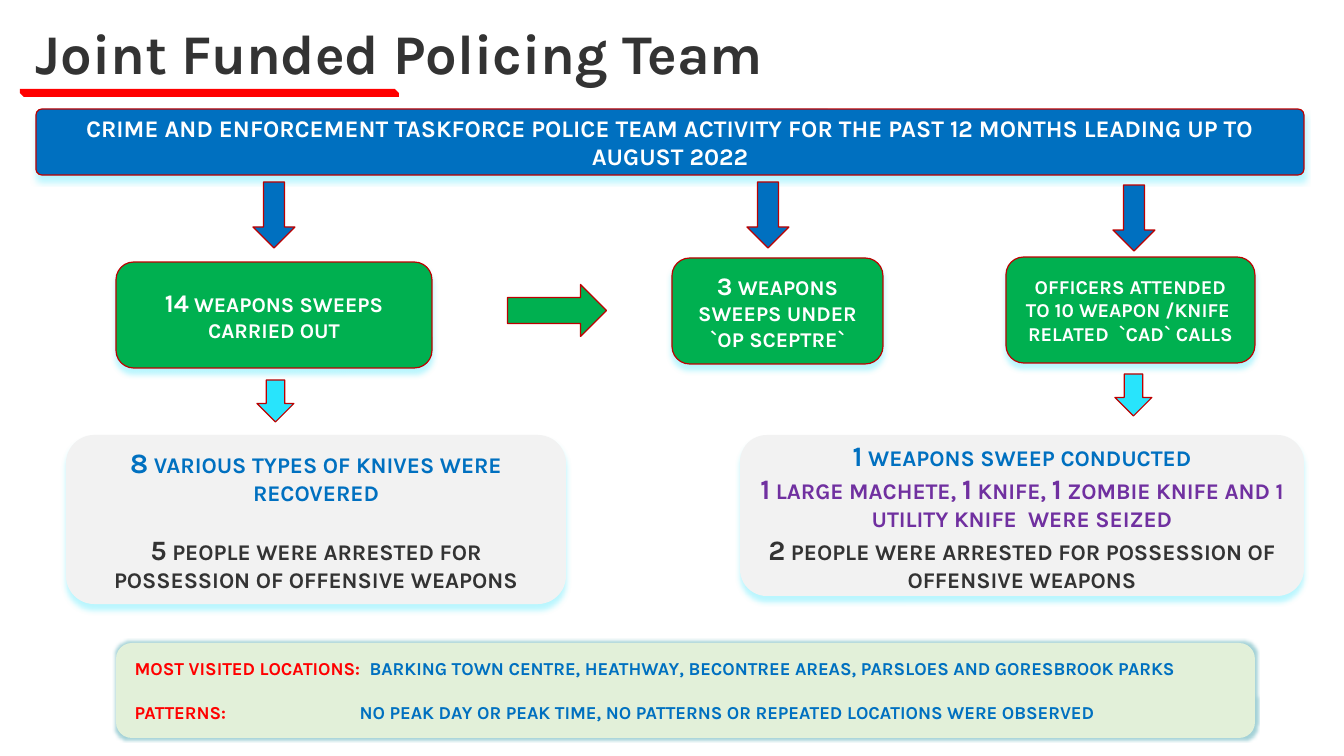
from dataclasses import dataclass

from lxml import etree
from pptx import Presentation
from pptx.dml.color import RGBColor
from pptx.enum.shapes import MSO_SHAPE
from pptx.enum.text import MSO_ANCHOR, PP_ALIGN
from pptx.oxml.ns import qn
from pptx.util import Emu, Pt

ROUNDED = MSO_SHAPE.ROUNDED_RECTANGLE
DOWN_ARROW = MSO_SHAPE.DOWN_ARROW
SNIPPED = MSO_SHAPE.SNIP_2_DIAG_RECTANGLE
MIDDLE = MSO_ANCHOR.MIDDLE
CENTER, LEFT = PP_ALIGN.CENTER, PP_ALIGN.LEFT

SLIDE_WIDTH, SLIDE_HEIGHT = 1344, 756
EMU_PER_PX = 12192000 / SLIDE_WIDTH


@dataclass(frozen=True)
class Theme:
    font: str = "Karla"
    ink: str = "333333"
    white: str = "FFFFFF"
    red: str = "FF0000"
    outline: str = "BD0000"
    blue: str = "0070C0"
    green: str = "00B050"
    cyan: str = "28E4FC"
    purple: str = "7030A0"
    panel: str = "F2F2F2"
    pale_green: str = "E2F0D9"
    shadow: str = "6FEDFD"
    glow: str = "4AA5B0"
    title: int = 40
    headline: int = 17
    result_number: int = 20
    result: int = 16
    action_number: int = 18
    action: int = 15
    calls: int = 14
    summary: int = 13
    outline_width: float = 0.85


THEME = Theme()


def px(value):
    return Emu(round(value * EMU_PER_PX))


def add_span(para, text, *, size, color):
    span = para.add_run()
    span.text = text
    span.font.name = THEME.font
    span.font.size = Pt(size)
    span.font.bold = True
    span.font.color.rgb = RGBColor.from_string(color)


def add_paras(box, paras, *, align=CENTER, gap=0, tabs=()):
    """Each paragraph is a list of (text, size, color) spans."""
    frame = box.text_frame
    frame.word_wrap = True
    frame.vertical_anchor = MIDDLE
    for index, spans in enumerate(paras):
        para = frame.add_paragraph() if index else frame.paragraphs[0]
        if tabs:
            tab_list = etree.SubElement(para._p.get_or_add_pPr(), qn("a:tabLst"))
            etree.SubElement(tab_list, qn("a:tab"), pos=str(px(tabs[index])), algn="l")
        para.alignment = align
        if index and gap:
            para.space_before = Pt(gap)
        for text, size, color in spans:
            add_span(para, text, size=size, color=color)


def add_effect(shape, kind, color, alpha, **settings):
    effects = shape.element.spPr.find(qn("a:effectLst"))
    effect = etree.SubElement(effects, qn(f"a:{kind}"), **settings)
    tint = etree.SubElement(effect, qn("a:srgbClr"), val=color)
    etree.SubElement(tint, qn("a:alpha"), val=str(alpha * 1000))


def add_shape(page, kind, bounds, fill, *, outlined=False):
    shape = page.shapes.add_shape(kind, *map(px, bounds))
    shape.fill.solid()
    shape.fill.fore_color.rgb = RGBColor.from_string(fill)
    if outlined:
        shape.line.color.rgb = RGBColor.from_string(THEME.outline)
        shape.line.width = Pt(THEME.outline_width)
    else:
        shape.line.fill.background()
    shape.shadow.inherit = False
    return shape


def add_card(page, bounds, fill, paras, *, outlined=True, gap=0):
    card = add_shape(page, ROUNDED, bounds, fill, outlined=outlined)
    add_effect(card, "outerShdw", THEME.shadow, 48, blurRad=str(Pt(4)),
               dist=str(Pt(4)), dir="5400000", algn="t", rotWithShape="0")
    add_paras(card, paras, gap=gap)
    return card


def add_arrow(page, bounds, fill, *, rotation=0):
    arrow = add_shape(page, DOWN_ARROW, bounds, fill, outlined=True)
    arrow.rotation = rotation


def action(number, text):
    return [(number, THEME.action_number, THEME.white),
            (text, THEME.action, THEME.white)]


def result(color, *parts):
    """Numbers are set larger than the words between them."""
    return [(part, THEME.result_number if part.isdigit() else THEME.result, color)
            for part in parts]


def add_title(page):
    underline = add_shape(page, SNIPPED, (20, 89, 379, 8), THEME.red)
    underline.adjustments[0] = 0
    underline.adjustments[1] = 0.5
    box = page.shapes.add_textbox(*map(px, (20, 23, 776, 67)))
    frame = box.text_frame
    frame.margin_left = frame.margin_right = px(16)
    frame.margin_top = frame.margin_bottom = px(16)
    add_paras(box, [[("Joint Funded Policing Team", THEME.title, THEME.ink)]], align=LEFT)
    frame.paragraphs[0].line_spacing = 0.9


def add_summary(page):
    summary = add_shape(page, ROUNDED, (116, 643, 1139, 95), THEME.pale_green)
    add_effect(summary, "glow", THEME.glow, 50, rad=str(Pt(3)))
    summary.text_frame.margin_left = px(14)
    rows = [
        ("MOST VISITED LOCATIONS:",
         "BARKING TOWN CENTRE, HEATHWAY, BECONTREE AREAS, PARSLOES AND GORESBROOK PARKS"),
        ("PATTERNS:",
         "NO PEAK DAY OR PEAK TIME, NO PATTERNS OR REPEATED LOCATIONS WERE OBSERVED"),
    ]
    paras = [[(label + "\t", THEME.summary, THEME.red),
              (finding, THEME.summary, THEME.blue)] for label, finding in rows]
    add_paras(summary, paras, align=LEFT, gap=15.5, tabs=(235, 225))


def main():
    deck = Presentation()
    deck.slide_width, deck.slide_height = px(SLIDE_WIDTH), px(SLIDE_HEIGHT)
    page = deck.slides.add_slide(deck.slide_layouts[6])

    # Title and headline
    add_title(page)
    headline = add_card(page, (36, 109, 1268, 66), THEME.blue, [[
        ("CRIME AND ENFORCEMENT TASKFORCE POLICE TEAM ACTIVITY FOR THE PAST 12 MONTHS "
         "LEADING UP TO AUGUST 2022", THEME.headline, THEME.white)]])
    headline.adjustments[0] = 0.09

    # Actions
    add_card(page, (116, 262, 316, 106), THEME.green,
             [action("14", " WEAPONS SWEEPS CARRIED OUT")])
    add_card(page, (672, 258, 211, 106), THEME.green,
             [action("3", " WEAPONS SWEEPS UNDER `OP SCEPTRE`")])
    add_card(page, (1006, 257, 249, 106), THEME.green, [[
        ("OFFICERS ATTENDED TO 10 WEAPON /KNIFE  RELATED  `CAD` CALLS",
         THEME.calls, THEME.white)]])

    # Results
    add_card(page, (66, 435, 500, 169), THEME.panel, [
        result(THEME.blue, "8", " VARIOUS TYPES OF KNIVES WERE RECOVERED"),
        result(THEME.ink, "5", " PEOPLE WERE ARRESTED FOR POSSESSION OF OFFENSIVE WEAPONS"),
    ], outlined=False, gap=19)
    add_card(page, (740, 435, 564, 161), THEME.panel, [
        result(THEME.blue, "1", " WEAPONS SWEEP CONDUCTED"),
        result(THEME.purple, "1", " LARGE MACHETE, ", "1", " KNIFE, ", "1",
               " ZOMBIE KNIFE AND 1 UTILITY KNIFE  WERE SEIZED"),
        result(THEME.ink, "2", " PEOPLE WERE ARRESTED FOR POSSESSION OF OFFENSIVE WEAPONS"),
    ], outlined=False)

    # Arrows
    for left, top in ((253, 182), (747, 182), (1113, 185)):
        add_arrow(page, (left, top, 42, 66), THEME.blue)
    for left, top in ((257, 380), (1115, 374)):
        add_arrow(page, (left, top, 37, 42), THEME.cyan)
    add_arrow(page, (531, 261, 52, 99), THEME.green, rotation=270)

    # Locations and patterns
    add_summary(page)

    deck.save("out.pptx")


if __name__ == "__main__":
    main()
